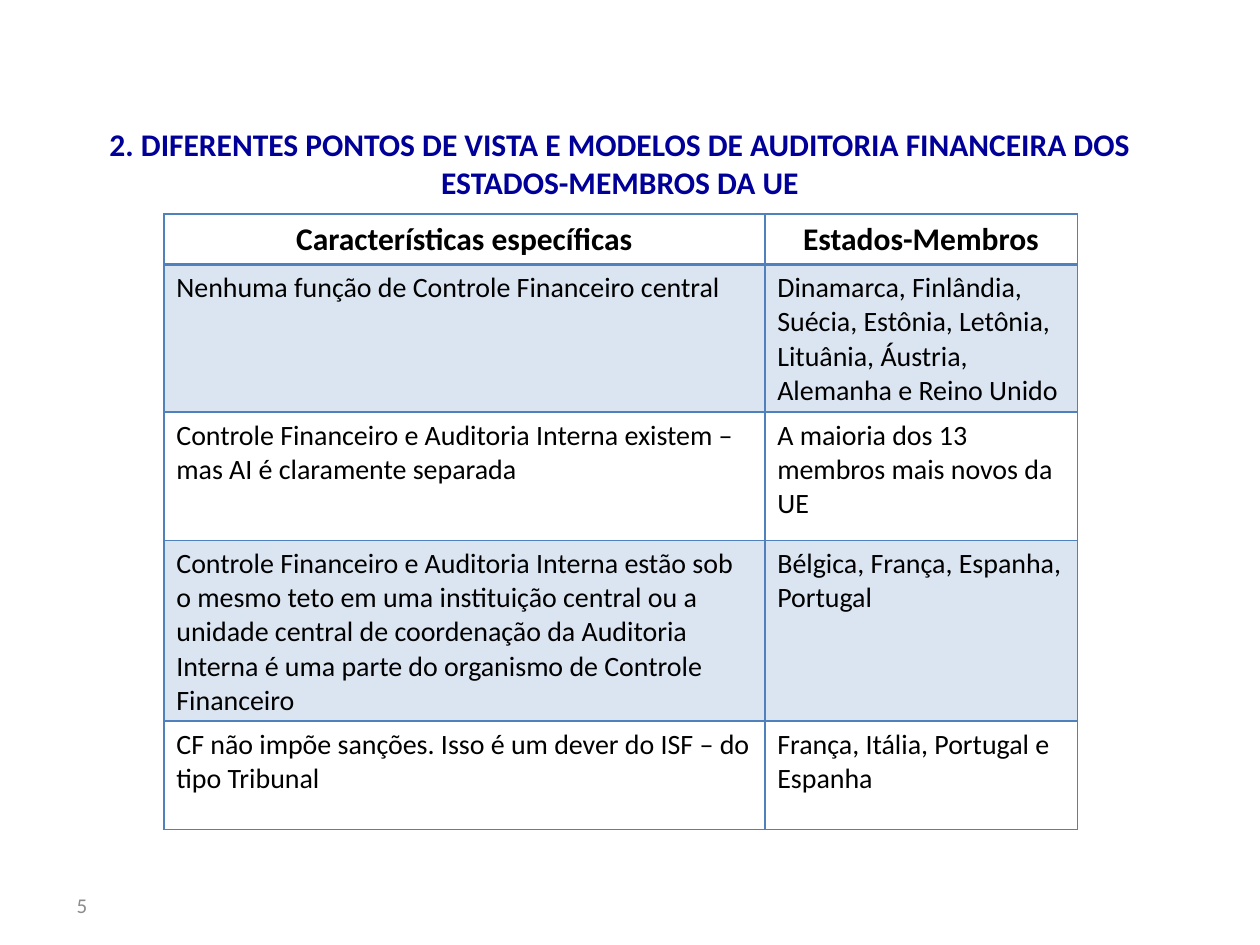
from lxml import etree
from pptx import Presentation
from pptx.dml.color import RGBColor
from pptx.enum.text import MSO_ANCHOR, MSO_AUTO_SIZE, PP_ALIGN
from pptx.oxml.ns import qn
from pptx.util import Inches, Pt

LEFT, CENTER = PP_ALIGN.LEFT, PP_ALIGN.CENTER
TOP, MIDDLE = MSO_ANCHOR.TOP, MSO_ANCHOR.MIDDLE
NO_AUTOFIT = MSO_AUTO_SIZE.NONE
TITLE_ONLY = 5

FONT = "Calibri"
NAVY, BLUE, GRAY, BLACK = "000099", "4F81BD", "8C8C8C", "000000"

TITLE = ("2. DIFERENTES PONTOS DE VISTA E MODELOS DE AUDITORIA FINANCEIRA "
         "DOS ESTADOS-MEMBROS DA UE")
COLUMN_WIDTHS = [4.77, 2.48]
ROW_HEIGHTS = [0.4, 1.17, 1.02, 1.43, 0.86]
ROWS = [
    ("Características específicas", "Estados-Membros"),
    ("Nenhuma função de Controle Financeiro central",
     "Dinamarca, Finlândia, Suécia, Estônia, Letônia, Lituânia, Áustria, "
     "Alemanha e Reino Unido"),
    ("Controle Financeiro e Auditoria Interna existem – mas AI é claramente "
     "separada",
     "A maioria dos 13 membros mais novos da UE"),
    ("Controle Financeiro e Auditoria Interna estão sob o mesmo teto em uma "
     "instituição central ou a unidade central de coordenação da Auditoria "
     "Interna é uma parte do organismo de Controle Financeiro",
     "Bélgica, França, Espanha, Portugal"),
    ("CF não impõe sanções. Isso é um dever do ISF – do tipo Tribunal",
     "França, Itália, Portugal e Espanha"),
]


def rgb(color):
    return RGBColor.from_string(color)


def write(tf, text, size=16, color=BLACK, bold=False, align=LEFT):
    p = tf.paragraphs[0]
    p.alignment = align
    r = p.add_run()
    r.text = text
    r.font.name = FONT
    r.font.size = Pt(size)
    r.font.bold = bold
    r.font.color.rgb = rgb(color)


def add_color(parent, color):
    fill = etree.SubElement(parent, qn("a:solidFill"))
    return etree.SubElement(fill, qn("a:srgbClr"), val=color)


def set_borders(cell, bottom):
    """Line all four sides; the bottom width is given in points."""
    tc_pr = cell._tc.get_or_add_tcPr()
    for side, width in (("L", 1), ("R", 1), ("T", 1), ("B", bottom)):
        ln = etree.SubElement(tc_pr, qn("a:ln" + side), w=str(Pt(width)))
        add_color(ln, BLUE)


def set_fill(cell, banded):
    if banded:
        color = add_color(cell._tc.get_or_add_tcPr(), BLUE)
        etree.SubElement(color, qn("a:alpha"), val="20000")
    else:
        cell.fill.background()


def place_title(slide, box):
    sp = slide.shapes.title
    sp.left, sp.top, sp.width, sp.height = box
    tf = sp.text_frame
    tf.word_wrap = True
    tf.auto_size = NO_AUTOFIT
    tf.vertical_anchor = TOP
    write(tf, TITLE, size=18, color=NAVY, bold=True, align=CENTER)


def place_page_number(slide, box):
    tf = slide.shapes.add_textbox(*box).text_frame
    tf.word_wrap = True
    tf.vertical_anchor = MIDDLE
    write(tf, "5", size=12, color=GRAY)


def place_table(slide, box):
    table = slide.shapes.add_table(len(ROWS), len(COLUMN_WIDTHS), *box).table
    table.first_row = table.horz_banding = False
    for column, width in zip(table.columns, COLUMN_WIDTHS):
        column.width = Inches(width)
    for i, (texts, height) in enumerate(zip(ROWS, ROW_HEIGHTS)):
        header = i == 0
        table.rows[i].height = Inches(height)
        for cell, text in zip(table.rows[i].cells, texts):
            set_borders(cell, bottom=2 if header else 1)
            set_fill(cell, banded=i % 2 == 1)
            write(cell.text_frame, text, size=18 if header else 16,
                  bold=header, align=CENTER if header else LEFT)


def inches(*lengths):
    return [Inches(length) for length in lengths]


def main():
    prs = Presentation()
    prs.slide_width, prs.slide_height = inches(10, 7.5)
    slide = prs.slides.add_slide(prs.slide_layouts[TITLE_ONLY])
    place_title(slide, inches(0.43, 0.94, 8.98, 1.01))
    place_page_number(slide, inches(0.51, 6.98, 2.33, 0.4))
    place_table(slide, inches(1.3, 1.7, sum(COLUMN_WIDTHS), sum(ROW_HEIGHTS)))
    prs.save("out.pptx")


if __name__ == "__main__":
    main()
